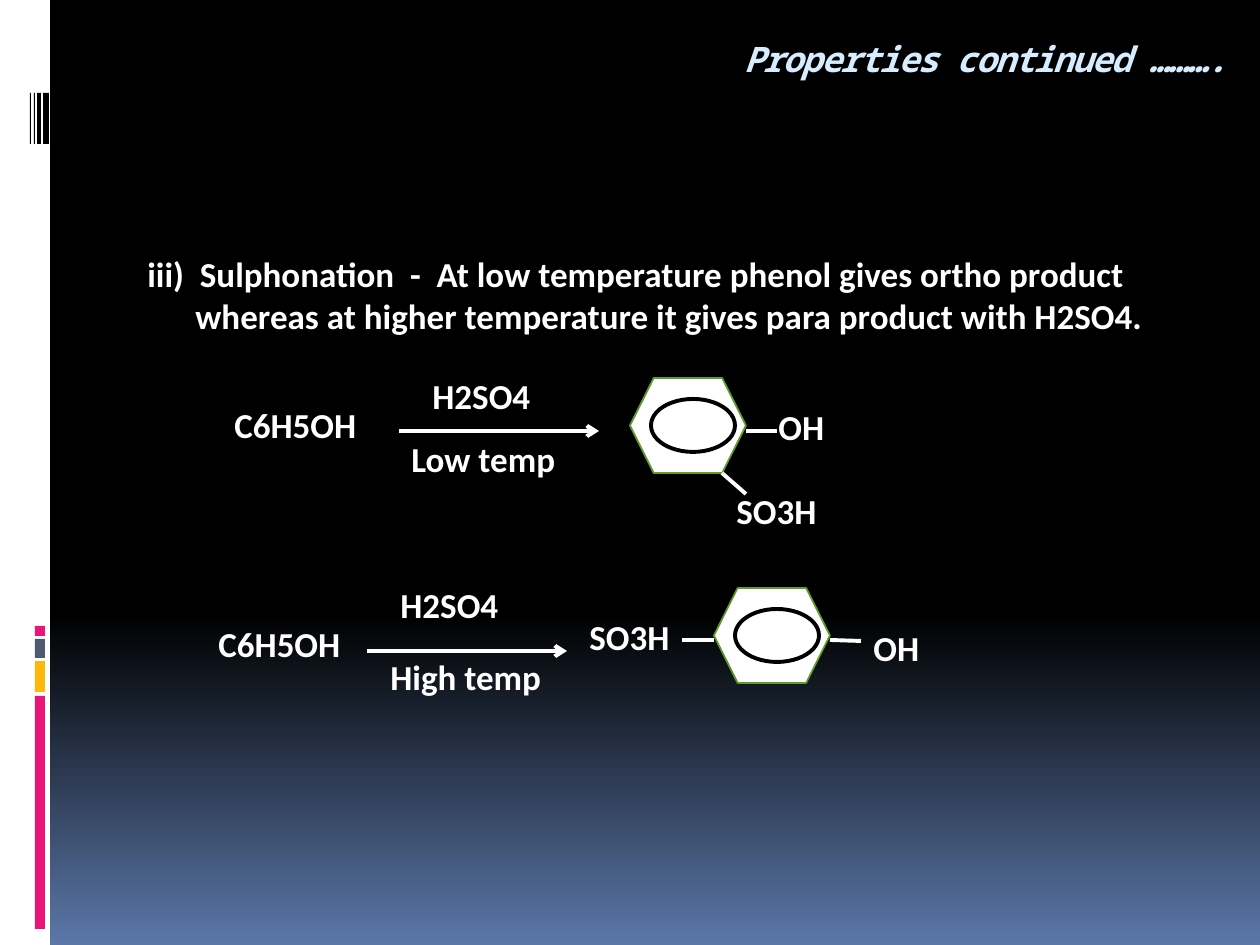
from typing import NamedTuple, Optional

from lxml import etree
from pptx import Presentation
from pptx import util as u
from pptx.dml.color import RGBColor
from pptx.enum import shapes, text
from pptx.oxml.ns import qn

PX = 914400 / 126
WHITE, BLACK, PINK = "FFFFFF", "000000", "EA157A"
LABEL_HEIGHT = 55


class Block(NamedTuple):
    left: int
    top: int
    width: int
    height: int
    fill: str


class Label(NamedTuple):
    words: str
    left: int
    top: int
    width: int


class Stroke(NamedTuple):
    x1: int
    y1: int
    x2: int
    y2: int
    arrow: bool = False


class Entry(NamedTuple):
    words: str
    margin: int
    indent: int
    before: float


BLOCKS = [
    Block(0, 0, 50, 945, WHITE),
    Block(35, 696, 10, 233, PINK),
    Block(35, 661, 10, 31, "FEB80A"),
    Block(35, 639, 10, 19, "4E5B6F"),
    Block(35, 626, 10, 10, PINK),
    *(Block(left, 93, width, 51, BLACK) for left, width in ((43, 6), (37, 4), (34, 1), (30, 1))),
]
ENTRIES = [
    Entry("iii)  Sulphonation  -  At low temperature phenol gives ortho product "
          "whereas at higher temperature it gives para product with H2SO4.", 57, -48, 7),
    Entry("C6H5OH", 96, 0, 38.4),
    Entry("C6H5OH", 80, 0, 101.2),
]
RINGS = [(630, 378), (714, 588)]
STROKES = [
    Stroke(399, 431, 599, 431, True),
    Stroke(367, 651, 567, 651, True),
    Stroke(746, 431, 777, 431),
    Stroke(722, 473, 746, 494),
    Stroke(682, 640, 714, 640),
    Stroke(830, 640, 861, 641),
]
LABELS = [
    Label("H2SO4", 420, 368, 136),
    Label("Low temp", 399, 431, 210),
    Label("OH", 766, 399, 84),
    Label("SO3H", 724, 483, 189),
    Label("H2SO4", 388, 577, 136),
    Label("High temp", 378, 649, 252),
    Label("SO3H", 577, 609, 189),
    Label("OH", 861, 620, 84),
]


def px(length: int) -> u.Emu:
    return u.Emu(round(length * PX))


def color(code: str) -> RGBColor:
    return RGBColor.from_string(code)


def add_figure(page, kind, left: int, top: int, width: int, height: int,
               fill: Optional[str], line: Optional[str] = None, weight: float = 1):
    figure = page.shapes.add_shape(kind, px(left), px(top), px(width), px(height))
    figure.shadow.inherit = False
    if fill:
        figure.fill.solid()
        figure.fill.fore_color.rgb = color(fill)
    else:
        figure.fill.background()
    if line:
        figure.line.color.rgb = color(line)
        figure.line.width = u.Pt(weight)
    else:
        figure.line.fill.background()


def add_ring(page, left: int, top: int) -> None:
    add_figure(page, shapes.MSO_SHAPE.HEXAGON, left, top, 116, 95, WHITE, "5E9B2C")
    add_figure(page, shapes.MSO_SHAPE.OVAL, left + 21, top + 21, 84, 53, None, BLACK, 2.25)


def add_stroke(page, stroke: Stroke) -> None:
    line = page.shapes.add_connector(shapes.MSO_CONNECTOR.STRAIGHT, px(stroke.x1), px(stroke.y1),
                                     px(stroke.x2), px(stroke.y2))
    line.line.color.rgb = color(WHITE)
    line.line.width = u.Pt(2.25)
    if stroke.arrow:
        etree.SubElement(line.line._get_or_add_ln(), qn("a:tailEnd"), type="arrow")
    etree.SubElement(line._element.spPr, qn("a:effectLst"))


def add_box(page, left: int, top: int, width: int, height: int):
    box = page.shapes.add_textbox(px(left), px(top), px(width), px(height))
    box.text_frame.word_wrap = True
    return box.text_frame


def write(para, words: str, font: str = "Calibri", ink: str = WHITE):
    para.text = words
    span = para.runs[0]
    span.font.name = font
    span.font.size = u.Pt(20)
    span.font.bold = True
    span.font.color.rgb = color(ink)
    return span


def add_title(page) -> None:
    frame = add_box(page, 189, 31, 1071, 126)
    frame.margin_right = px(32)
    para = frame.paragraphs[0]
    para.alignment = text.PP_ALIGN.RIGHT
    span = write(para, "Properties continued ……….", "Noto Sans Mono", "D6ECFF")
    span.font.italic = True
    span.font._element.set("spc", "-100")


def add_body(page) -> None:
    frame = add_box(page, 126, 246, 1092, 630)
    for index, entry in enumerate(ENTRIES):
        para = frame.add_paragraph() if index else frame.paragraphs[0]
        write(para, entry.words)
        para.space_before = u.Pt(entry.before)
        properties = para._p.get_or_add_pPr()
        properties.set("marL", str(px(entry.margin)))
        properties.set("indent", str(px(entry.indent)))


def paint_background(page) -> None:
    fill = page.background.fill
    fill.gradient()
    fill.gradient_angle = 270
    for stop, (position, code) in zip(fill.gradient_stops, ((0.65, BLACK), (1, "5B77A8"))):
        stop.position = position
        stop.color.rgb = color(code)


def main() -> None:
    deck = Presentation()
    deck.slide_width, deck.slide_height = px(1260), px(945)
    page = deck.slides.add_slide(deck.slide_layouts[6])
    paint_background(page)
    for block in BLOCKS:
        add_figure(page, shapes.MSO_SHAPE.RECTANGLE, *block)
    add_title(page)
    add_body(page)
    for left, top in RINGS:
        add_ring(page, left, top)
    for stroke in STROKES:
        add_stroke(page, stroke)
    for label in LABELS:
        frame = add_box(page, label.left, label.top, label.width, LABEL_HEIGHT)
        write(frame.paragraphs[0], label.words)
    deck.save("out.pptx")


if __name__ == "__main__":
    main()
